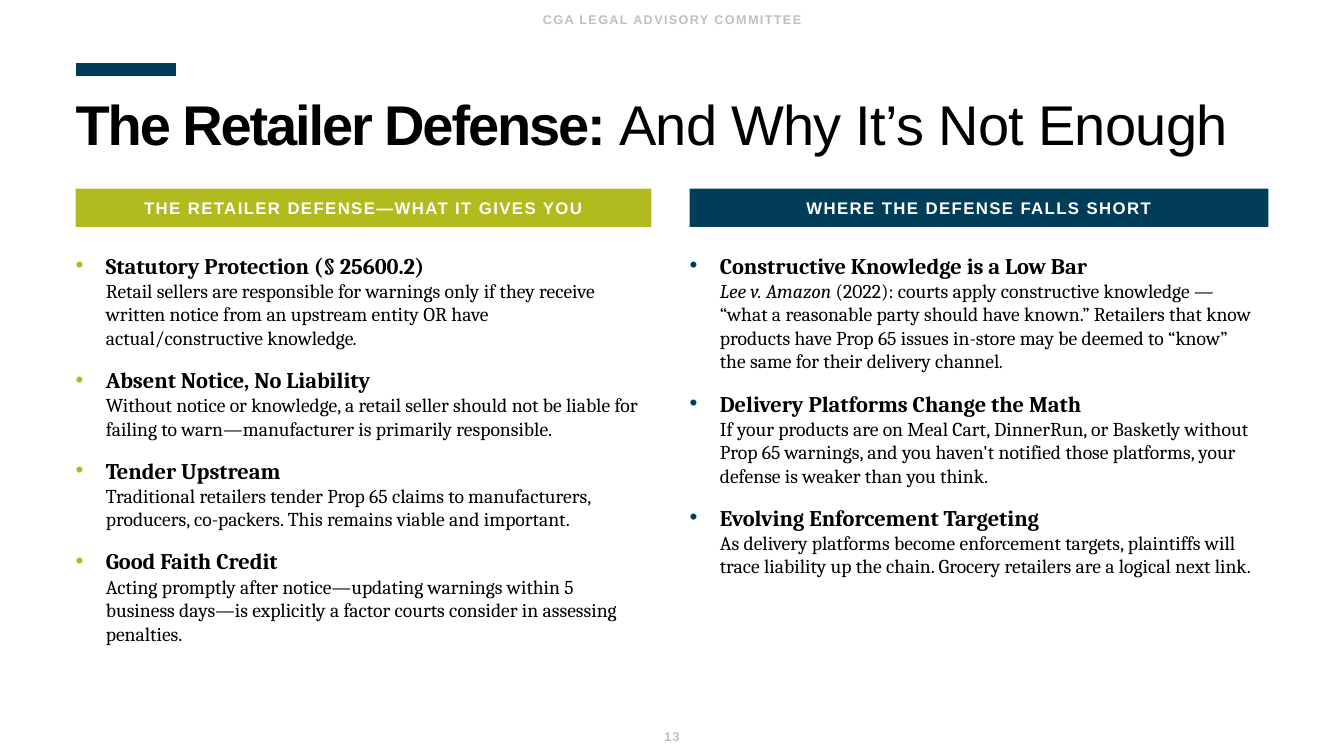
from lxml.etree import SubElement
from pptx import Presentation
from pptx.dml.color import RGBColor
from pptx.enum.shapes import MSO_CONNECTOR, MSO_SHAPE
from pptx.enum.text import MSO_ANCHOR, MSO_AUTO_SIZE, PP_ALIGN
from pptx.oxml.ns import qn
from pptx.util import Inches, Pt

NAVY, LIME, GREY, BLACK, WHITE = "003D58", "B2BB1E", "BFBFBF", "000000", "FFFFFF"
WIDTH, HEIGHT = 13.33, 7.5
MARGIN, BAND = 0.75, 0.38
CONTENT = WIDTH - 2 * MARGIN


def rgb(hex_color):
    return RGBColor.from_string(hex_color)


def add_run(p, text, size, font, color, bold=False, italic=False, spacing=0):
    r = p.add_run()
    r.text = text
    r.font.size = Pt(size)
    r.font.name = font
    r.font.color.rgb = rgb(color)
    r.font.bold = bold
    r.font.italic = italic
    if spacing:
        r._r.get_or_add_rPr().set("spc", str(int(spacing * 100)))


columns = [
    (MARGIN, 5.71, LIME, "THE RETAILER DEFENSE―WHAT IT GIVES YOU", [
        ("Statutory Protection (§ 25600.2)", [
            ("Retail sellers are responsible for warnings only if they receive written notice "
             "from an upstream entity OR have actual/constructive knowledge", False),
            (".", True)]),
        ("Absent Notice, No Liability", [
            ("Without notice or knowledge, a retail seller should not be liable for failing to "
             "warn—manufacturer is primarily responsible.", False)]),
        ("Tender Upstream", [
            ("Traditional retailers tender Prop 65 claims to manufacturers, producers, "
             "co-packers. This remains viable and important.", False)]),
        ("Good Faith Credit", [
            ("Acting promptly after notice—updating warnings within 5 business days—is "
             "explicitly a factor courts consider in assessing penalties.", False)]),
    ]),
    (6.84, 5.74, NAVY, "WHERE THE DEFENSE FALLS SHORT", [
        ("Constructive Knowledge is a Low Bar", [
            ("Lee v. Amazon ", True),
            ("(2022): courts apply constructive knowledge — “what a reasonable party should "
             "have known.” Retailers that know products have Prop 65 issues in-store may be "
             "deemed to “know” the same for their delivery channel", False),
            (".", True)]),
        ("Delivery Platforms Change the Math", [
            ("If your products are on Meal Cart, DinnerRun, or Basketly without Prop 65 "
             "warnings, and you haven't notified those platforms, your defense is weaker "
             "than you think.", False)]),
        ("Evolving Enforcement Targeting", [
            ("As delivery platforms become enforcement targets, plaintiffs will trace "
             "liability up the chain. Grocery retailers are a logical next link.", False)]),
    ]),
]

prs = Presentation()
prs.slide_width, prs.slide_height = Inches(WIDTH), Inches(HEIGHT)
s = prs.slides.add_slide(prs.slide_layouts[5])
s.background.fill.solid()
s.background.fill.fore_color.rgb = rgb(WHITE)

accent = s.shapes.add_connector(
    MSO_CONNECTOR.STRAIGHT, Inches(MARGIN), Inches(0.69), Inches(MARGIN + 1), Inches(0.69))
accent.line.color.rgb = rgb(NAVY)
accent.line.width = Pt(9)
SubElement(accent._element.spPr, qn("a:effectLst"))

title = s.shapes.title
title.left, title.top = Inches(MARGIN), Inches(0.76)
title.width, title.height = Inches(CONTENT), Inches(1.12)
tf = title.text_frame
tf.auto_size = MSO_AUTO_SIZE.NONE
tf.word_wrap = True
tf.vertical_anchor = MSO_ANCHOR.TOP
tf.margin_left = tf.margin_right = tf.margin_bottom = 0
tf.margin_top = Inches(0.2)
p = tf.paragraphs[0]
p.alignment = PP_ALIGN.LEFT
p.line_spacing = 0.9
add_run(p, "The Retailer Defense: ", 40, "Arial", BLACK, bold=True, spacing=-1.5)
add_run(p, "And Why It’s Not Enough", 40, "Arial", BLACK, spacing=-0.5)

for left, width, color, heading, points in columns:
    sp = s.shapes.add_shape(
        MSO_SHAPE.RECTANGLE, Inches(left), Inches(1.87), Inches(width), Inches(BAND))
    sp.shadow.inherit = False
    sp.fill.solid()
    sp.fill.fore_color.rgb = rgb(color)
    sp.line.fill.background()
    tf = sp.text_frame
    tf.margin_left = tf.margin_right = 0
    tf.vertical_anchor = MSO_ANCHOR.MIDDLE
    p = tf.paragraphs[0]
    p.alignment = PP_ALIGN.CENTER
    add_run(p, heading, 12, "Arial", WHITE, bold=True, spacing=1)

    body = s.shapes.add_textbox(Inches(left), Inches(2.45), Inches(width), Inches(4.3))
    tf = body.text_frame
    tf.word_wrap = True
    tf.margin_left = 0
    for i, (point, details) in enumerate(points):
        p = tf.paragraphs[0] if i == 0 else tf.add_paragraph()
        if i:
            p.space_before = Pt(12)
        pPr = p._p.get_or_add_pPr()
        pPr.set("marL", str(Inches(0.3)))
        pPr.set("indent", str(-Inches(0.3)))
        SubElement(SubElement(pPr, qn("a:buClr")), qn("a:srgbClr"), val=color)
        SubElement(pPr, qn("a:buFont"), typeface="Arial")
        SubElement(pPr, qn("a:buChar"), char="•")
        add_run(p, point, 16, "Cambria", BLACK, bold=True)
        p.add_line_break()
        SubElement(p._p[-1], qn("a:rPr"), sz="1600")
        for text, italic in details:
            add_run(p, text, 14, "Cambria", BLACK, italic=italic)

for top, text in [(0, "CGA LEGAL ADVISORY COMMITTEE"), (HEIGHT - BAND, "13")]:
    strip = s.shapes.add_textbox(0, Inches(top), Inches(WIDTH), Inches(BAND))
    tf = strip.text_frame
    tf.word_wrap = True
    tf.vertical_anchor = MSO_ANCHOR.MIDDLE
    p = tf.paragraphs[0]
    p.alignment = PP_ALIGN.CENTER
    add_run(p, text, 9, "Arial", GREY, bold=True, spacing=1)

prs.save("out.pptx")
